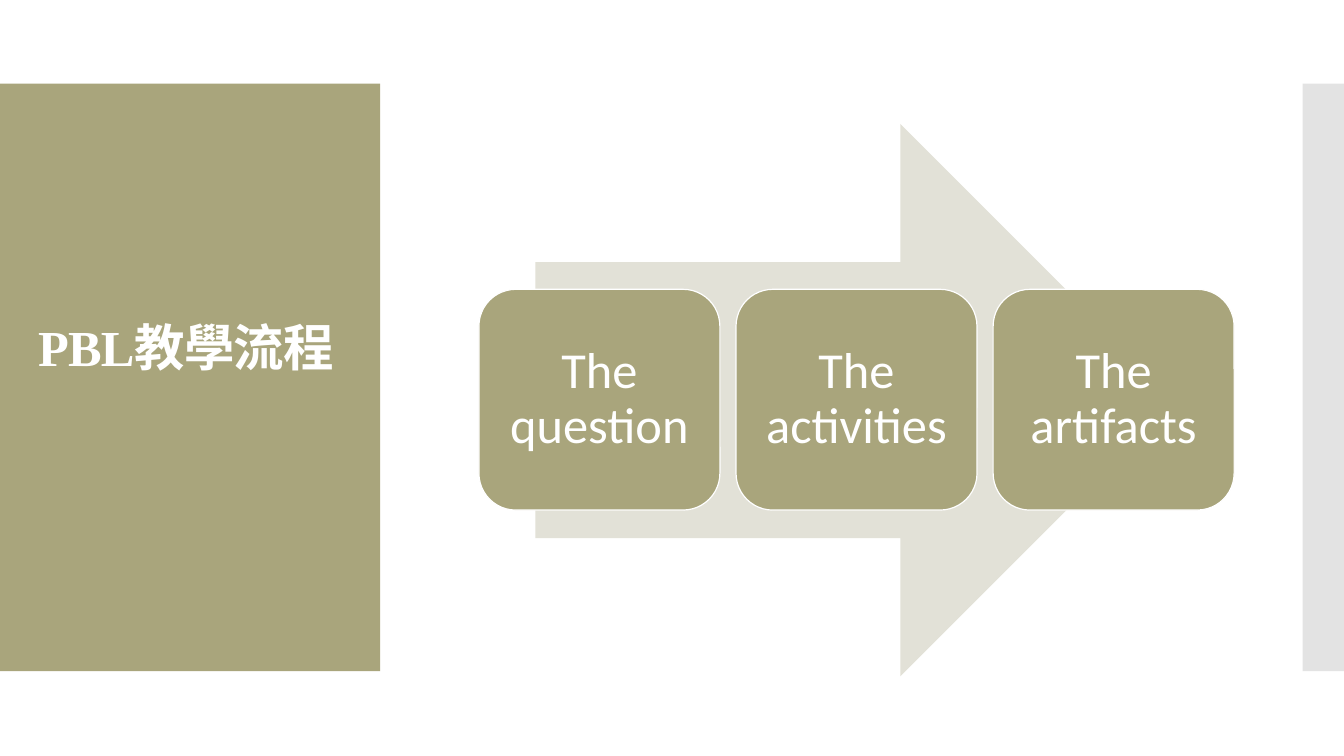
from pptx import Presentation
from pptx.dml.color import RGBColor
from pptx.enum.shapes import MSO_SHAPE
from pptx.enum.text import MSO_ANCHOR, PP_ALIGN
from pptx.oxml.ns import qn
from pptx.util import Inches, Pt
from lxml import etree

TITLE = "PBL教學流程"
STAGES = ["The question", "The activities", "The artifacts"]

OLIVE = RGBColor(0xA9, 0xA5, 0x7C)
PALE_OLIVE = RGBColor(0xE2, 0xE1, 0xD7)
GREY = RGBColor(0xC8, 0xC8, 0xC8)
WHITE = RGBColor(0xFF, 0xFF, 0xFF)

BAND_TOP, BAND_HEIGHT = 0.83, 5.83
STAGE_LEFT, STAGE_TOP = 4.75, 2.87
STAGE_WIDTH, STAGE_HEIGHT, STAGE_GAP = 2.39, 2.19, 0.16

presentation = Presentation()
presentation.slide_width = Inches(13.33)
presentation.slide_height = Inches(7.5)
slide = presentation.slides.add_slide(presentation.slide_layouts[6])


def add_filled(kind, left, top, width, height, color):
    shape = slide.shapes.add_shape(
        kind, Inches(left), Inches(top), Inches(width), Inches(height))
    shape.shadow.inherit = False
    shape.fill.solid()
    shape.fill.fore_color.rgb = color
    shape.line.fill.background()
    return shape


def write(shape, text, font_name, align, bold=False):
    frame = shape.text_frame
    frame.word_wrap = True
    frame.vertical_anchor = MSO_ANCHOR.MIDDLE
    frame.text = text
    paragraph = frame.paragraphs[0]
    paragraph.alignment = align
    paragraph.line_spacing = 0.9
    run = paragraph.runs[0]
    run.font.name = font_name
    run.font.size = Pt(36)
    run.font.bold = bold
    run.font.color.rgb = WHITE
    return run


add_filled(MSO_SHAPE.RECTANGLE, 0, BAND_TOP, 3.77, BAND_HEIGHT, OLIVE)
edge_band = add_filled(MSO_SHAPE.RECTANGLE, 12.92, BAND_TOP, 0.41, BAND_HEIGHT, GREY)
edge_color = edge_band.fill._xPr.find(qn("a:solidFill"))[0]
etree.SubElement(edge_color, qn("a:alpha")).set("val", "50000")

title = slide.shapes.add_textbox(Inches(0.28), Inches(1.23), Inches(3.22), Inches(5.03))
title_run = write(title, TITLE, "Times New Roman", PP_ALIGN.LEFT, bold=True)
title_run._r.get_or_add_rPr().set("spc", "-60")
title.text_frame.margin_bottom = Inches(0.6)

add_filled(MSO_SHAPE.RIGHT_ARROW, 5.31, 1.23, 6.36, 5.48, PALE_OLIVE)

for index, stage in enumerate(STAGES):
    left = STAGE_LEFT + index * (STAGE_WIDTH + STAGE_GAP)
    box = add_filled(MSO_SHAPE.ROUNDED_RECTANGLE, left, STAGE_TOP,
                     STAGE_WIDTH, STAGE_HEIGHT, OLIVE)
    box.line.color.rgb = WHITE
    box.line.width = Pt(0.85)
    write(box, stage, "Calibri", PP_ALIGN.CENTER)
    frame = box.text_frame
    frame.margin_left = frame.margin_right = Inches(0.15)
    frame.margin_top = frame.margin_bottom = Inches(0.15)

presentation.save("out.pptx")
